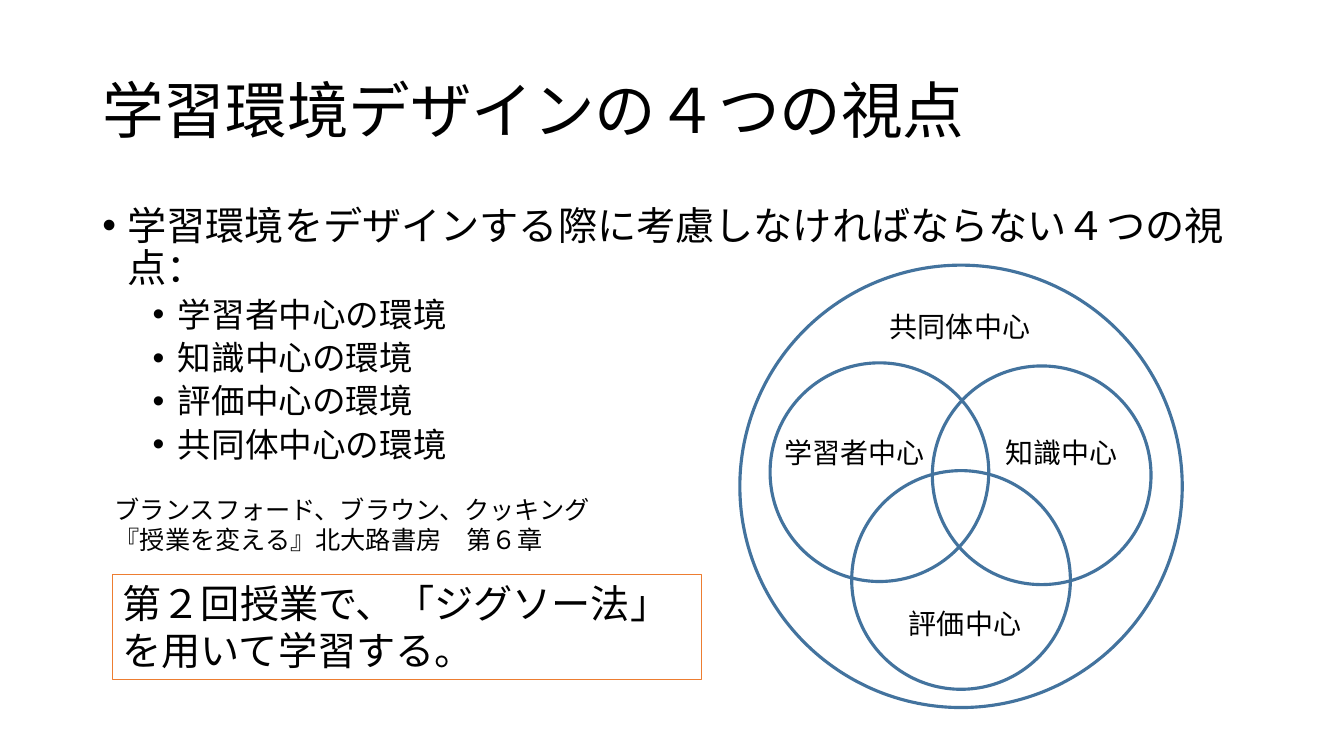
from lxml import etree
from pptx import Presentation
from pptx.dml.color import RGBColor
from pptx.enum.shapes import MSO_SHAPE
from pptx.enum.text import MSO_ANCHOR, PP_ALIGN
from pptx.oxml.ns import qn
from pptx.util import Pt

OVAL, RECT = MSO_SHAPE.OVAL, MSO_SHAPE.RECTANGLE
TOP, MIDDLE = MSO_ANCHOR.TOP, MSO_ANCHOR.MIDDLE
LEFT = PP_ALIGN.LEFT
FONT = "Noto Sans CJK JP"
COLORS = {"text": "000000", "circle": "43739E", "frame": "ED7D31", "paper": "FFFFFF"}


def rgb(name):
    return RGBColor.from_string(COLORS[name])


def add_text(tf, text, first=True, size=20, spacing=None, before=0, level=0, indent=None):
    p = tf.paragraphs[0] if first else tf.add_paragraph()
    p.alignment = LEFT
    p.level = level
    if spacing:
        p.line_spacing = spacing
    if before:
        p.space_before = Pt(before)
    if indent:
        pPr = p._p.get_or_add_pPr()
        pPr.set("marL", str(Pt(indent)))
        pPr.set("indent", str(-Pt(18)))
        etree.SubElement(pPr, qn("a:buFont")).set("typeface", "Arial")
        etree.SubElement(pPr, qn("a:buChar")).set("char", "•")
    r = p.add_run()
    r.text = text
    r.font.size = Pt(size)
    r.font.color.rgb = rgb("text")
    r.font.name = FONT
    etree.SubElement(r._r.get_or_add_rPr(), qn("a:ea")).set("typeface", FONT)


class Deck:
    """Draws styled elements on the current slide, with lengths in points."""

    def __init__(self, width, height):
        self.prs = Presentation()
        self.prs.slide_width, self.prs.slide_height = Pt(width), Pt(height)
        self.s = self.prs.slides.add_slide(self.prs.slide_layouts[6])

    def text(self, x, y, w, h, lines, wrap=True, anchor=TOP):
        tf = self.s.shapes.add_textbox(Pt(x), Pt(y), Pt(w), Pt(h)).text_frame
        tf.word_wrap = wrap
        tf.vertical_anchor = anchor
        for i, (line, style) in enumerate(lines):
            add_text(tf, line, first=i == 0, **style)

    def shape(self, kind, x, y, w, h, line, weight, fill=None):
        sp = self.s.shapes.add_shape(kind, Pt(x), Pt(y), Pt(w), Pt(h))
        sp.shadow.inherit = False
        if fill:
            sp.fill.solid()
            sp.fill.fore_color.rgb = rgb(fill)
        else:
            sp.fill.background()
        sp.line.color.rgb = rgb(line)
        sp.line.width = Pt(weight)
        return sp

    def circle(self, x, y, d):
        self.shape(OVAL, x, y, d, d, "circle", 2.25)

    def framed(self, x, y, w, h, text, size):
        sp = self.shape(RECT, x, y, w, h, "frame", 1, "paper")
        tf = sp.text_frame
        tf.word_wrap = True
        tf.vertical_anchor = TOP
        add_text(tf, text, size=size)


def main():
    deck = Deck(960, 540)
    deck.text(66, 28.8, 828, 104.4,
              [("学習環境デザインの４つの視点", {"size": 44, "spacing": 0.9})], anchor=MIDDLE)

    point = {"size": 28, "spacing": 0.9, "indent": 18}
    sub = {"size": 24, "spacing": 0.9, "indent": 54, "before": 5, "level": 1}
    views = ["学習者中心", "知識中心", "評価中心", "共同体中心"]
    deck.text(66, 144, 828, 342.7,
              [("学習環境をデザインする際に考慮しなければならない４つの視点：", point)]
              + [(f"{view}の環境", sub) for view in views])

    deck.circle(528.5, 189.4, 316)
    for x, y in [(550.1, 259.2), (666, 261.4), (608.4, 336.2)]:
        deck.circle(x, y, 156.2)
    places = [(553, 307.4, 115.2), (711.4, 307.4, 95), (642.2, 429.8, 95), (628.6, 217.4, 115.2)]
    for view, (x, y, w) in zip(views, places):
        deck.text(x, y, w, 31.5, [(view, {"size": 20})], wrap=False)

    source = ["ブランスフォード、ブラウン、クッキング", "『授業を変える』北大路書房　第６章"]
    deck.text(74.9, 349.2, 360, 51, [(line, {"size": 18}) for line in source], wrap=False)
    deck.framed(80.6, 410.4, 420.5, 75, "第２回授業で、「ジグソー法」を用いて学習する。", 28)
    deck.prs.save("out.pptx")


if __name__ == "__main__":
    main()
